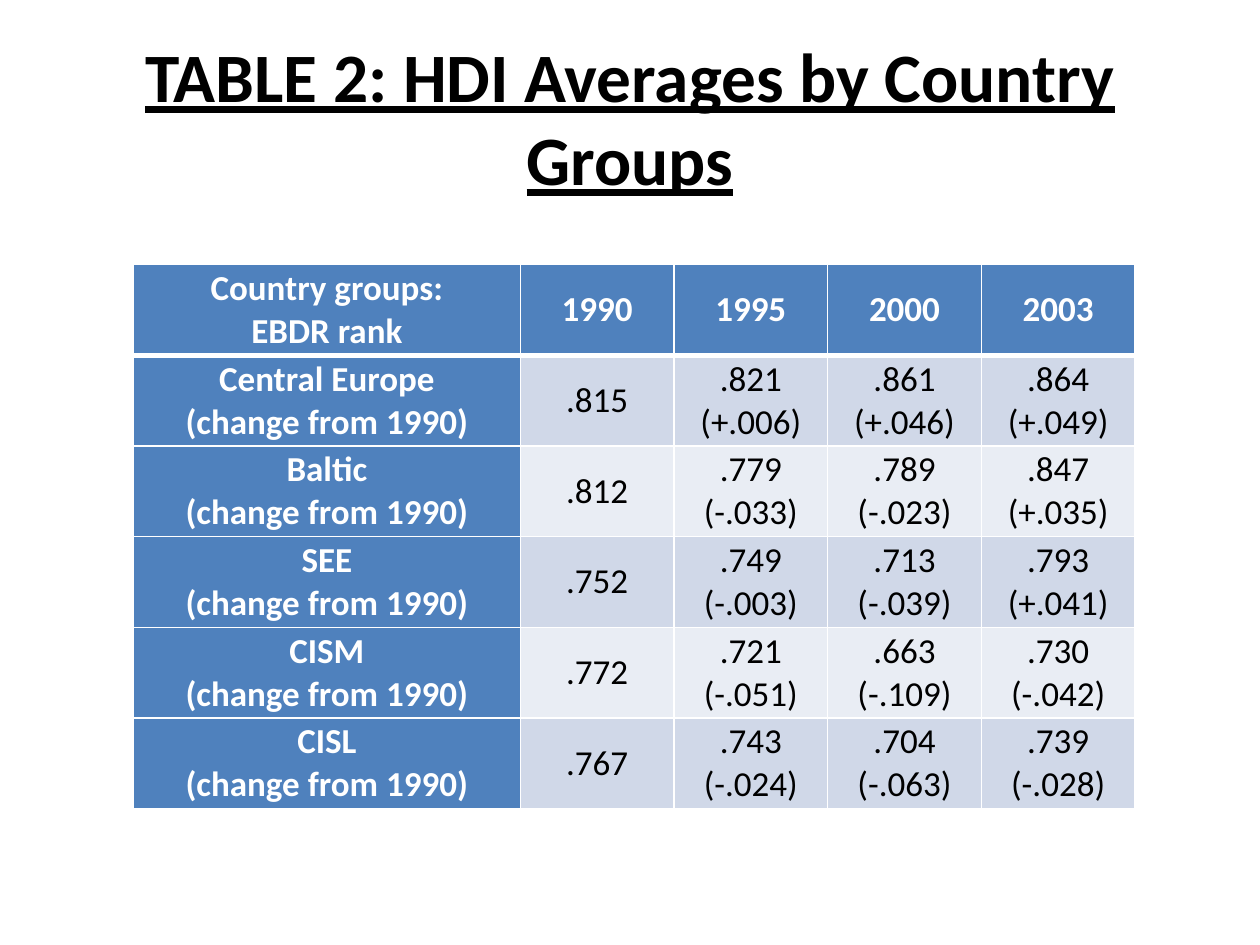
from dataclasses import dataclass
from typing import Any

from lxml.etree import SubElement
from pptx import Presentation
from pptx.dml.color import RGBColor
from pptx.enum.text import MSO_ANCHOR, MSO_AUTO_SIZE, PP_ALIGN
from pptx.oxml.ns import qn
from pptx.util import Inches, Pt


@dataclass(frozen=True)
class Theme:
    font: str = "Calibri"
    title_size: float = 39.6
    cell_size: float = 20
    dark: str = "000000"
    light: str = "FFFFFF"
    header: str = "4F81BD"
    bands: tuple[str, str] = ("D0D8E8", "E9EDF4")
    thin: float = 1
    thick: float = 3


@dataclass(frozen=True)
class CountryGroup:
    name: str
    averages: tuple[float, ...]


THEME = Theme()
YEARS = ("1990", "1995", "2000", "2003")
GROUPS = (
    CountryGroup("Central Europe", (0.815, 0.821, 0.861, 0.864)),
    CountryGroup("Baltic", (0.812, 0.779, 0.789, 0.847)),
    CountryGroup("SEE", (0.752, 0.749, 0.713, 0.793)),
    CountryGroup("CISM", (0.772, 0.721, 0.663, 0.730)),
    CountryGroup("CISL", (0.767, 0.743, 0.704, 0.739)),
)
COLUMN_WIDTHS = (3.07,) + (1.22,) * len(YEARS)
ROW_HEIGHT = 0.72


def apply_format(target: Any, values: dict[str, Any]) -> None:
    for name, value in values.items():
        setattr(target, name, value)


def write_lines(frame: Any, lines: list[str], size: float, color: str,
                bold: bool, underline: bool = False) -> None:
    frame.text = "\n".join(lines)
    for para in frame.paragraphs:
        para.alignment = PP_ALIGN.CENTER
        for span in para.runs:
            apply_format(span.font, {"name": THEME.font, "size": Pt(size),
                                     "bold": bold, "underline": underline})
            span.font.color.rgb = RGBColor.from_string(color)


def add_borders(cell: Any, widths: dict[str, float]) -> None:
    properties = cell._tc.get_or_add_tcPr()
    for side, width in widths.items():
        line = SubElement(properties, qn(f"a:ln{side}"), w=str(Pt(width)))
        fill = SubElement(line, qn("a:solidFill"))
        SubElement(fill, qn("a:srgbClr"), val=THEME.light)


def format_average(value: float, base: float, is_base: bool) -> list[str]:
    lines = [f"{value:.3f}"]
    if not is_base:
        lines.append(f"({value - base:+.3f})")
    return [line.replace("0.", ".") for line in lines]


def table_rows() -> list[list[list[str]]]:
    rows = [[["Country groups:", "EBDR rank"]] + [[year] for year in YEARS]]
    for group in GROUPS:
        base = group.averages[0]
        rows.append([[group.name, "(change from 1990)"]]
                    + [format_average(value, base, index == 0)
                       for index, value in enumerate(group.averages)])
    return rows


def draw_cell(cell: Any, lines: list[str], row: int, column: int) -> None:
    is_header = row == 0 or column == 0
    add_borders(cell, {"L": THEME.thin, "R": THEME.thin,
                       "T": THEME.thick if row == 1 else THEME.thin,
                       "B": THEME.thick if row == 0 else THEME.thin})
    apply_format(cell, {"margin_left": Inches(0.07), "margin_right": Inches(0.07),
                        "margin_top": 0, "margin_bottom": 0,
                        "vertical_anchor": MSO_ANCHOR.MIDDLE})
    color = THEME.header if is_header else THEME.bands[(row - 1) % 2]
    cell.fill.solid()
    cell.fill.fore_color.rgb = RGBColor.from_string(color)
    write_lines(cell.text_frame, lines, THEME.cell_size,
                THEME.light if is_header else THEME.dark, is_header)


def draw_title(slide: Any, text: str) -> None:
    title = slide.shapes.title
    apply_format(title, {"left": Inches(0.5), "top": Inches(0.3),
                         "width": Inches(9), "height": Inches(1.25)})
    apply_format(title.text_frame, {"auto_size": MSO_AUTO_SIZE.NONE, "word_wrap": True,
                                    "vertical_anchor": MSO_ANCHOR.MIDDLE})
    write_lines(title.text_frame, [text], THEME.title_size, THEME.dark, True, True)


def draw_table(slide: Any) -> None:
    rows = table_rows()
    table = slide.shapes.add_table(
        len(rows), len(COLUMN_WIDTHS), Inches(1.06), Inches(2.1),
        Inches(sum(COLUMN_WIDTHS)), Inches(ROW_HEIGHT * len(rows))).table
    table.first_col = True
    for column, width in zip(table.columns, COLUMN_WIDTHS):
        column.width = Inches(width)
    for row_index, row in enumerate(rows):
        table.rows[row_index].height = Inches(ROW_HEIGHT)
        for column_index, lines in enumerate(row):
            draw_cell(table.cell(row_index, column_index), lines, row_index, column_index)


def main() -> None:
    deck = Presentation()
    apply_format(deck, {"slide_width": Inches(10), "slide_height": Inches(7.5)})
    slide = deck.slides.add_slide(deck.slide_layouts.get_by_name("Title Only"))
    draw_title(slide, "TABLE 2: HDI Averages by Country Groups")
    draw_table(slide)
    deck.save("out.pptx")


if __name__ == "__main__":
    main()
